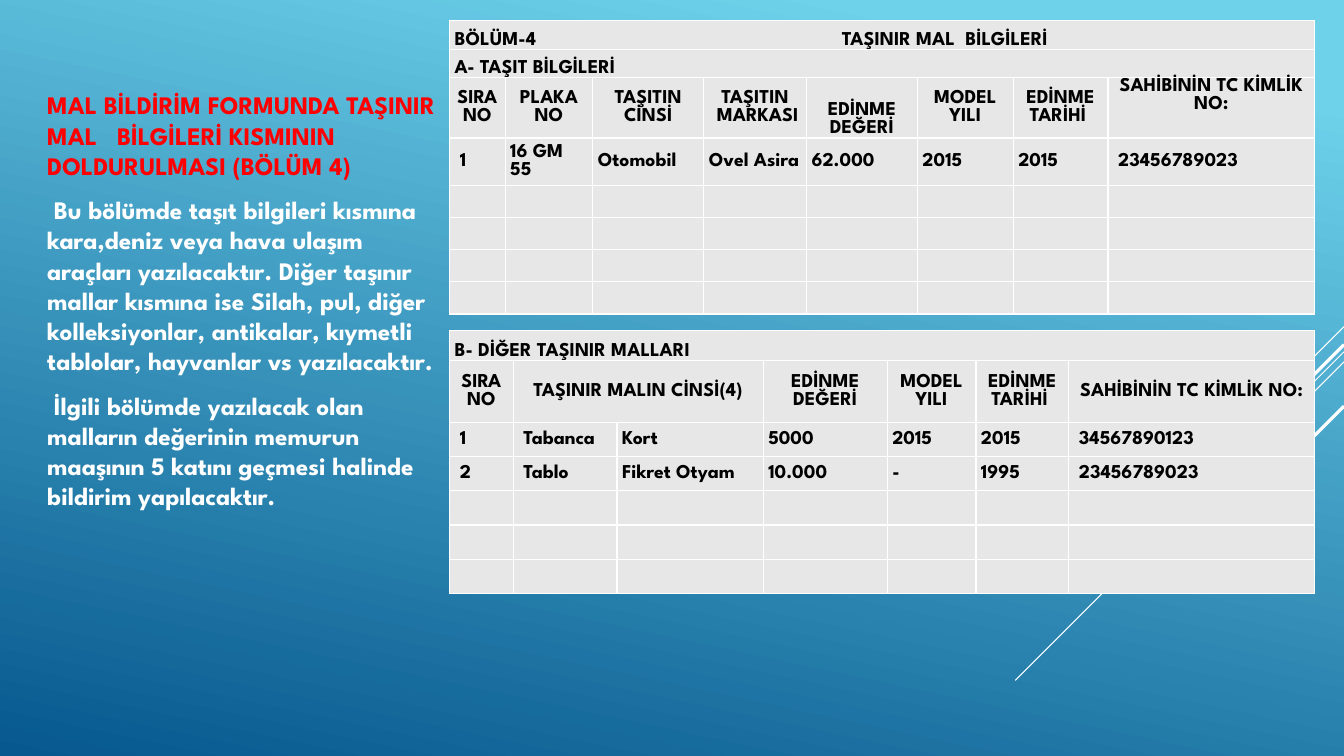
"""Build the slide on filling in the movable property section of the declaration form."""
from copy import deepcopy
from dataclasses import dataclass, field
from typing import Any

from lxml import etree
from pptx import Presentation
from pptx import util as u
from pptx.dml.color import RGBColor
from pptx.enum import shapes, text
from pptx.oxml import ns

SCALE = 9144


@dataclass(frozen=True)
class Theme:
    """Colours, font and type sizes of the slide."""
    font: str = "League Spartan"
    white: str = "FFFFFF"
    black: str = "000000"
    red: str = "FF0000"
    cell: str = "E7E7E7"
    sky: str = "6ED2EB"
    deep: str = "06588E"
    body_pt: int = 18
    table_pt: int = 14
    border_pt: int = 1


@dataclass(frozen=True)
class Stripe:
    """A diagonal line running from the right edge down to the left."""
    y: int
    run: int
    width: float


@dataclass(frozen=True)
class Paragraph:
    """One paragraph of the explanation."""
    words: str
    color: str


@dataclass(frozen=True)
class FormTable:
    """A section of the form, with its columns, rows and wording."""
    top: int
    cols: list[int]
    rows: list[int]
    titles: list[str]
    headers: list[str]
    data: list[list[str]]
    merges: list[tuple[int, int, int]]
    anchors: dict[tuple[int, int], Any] = field(default_factory=dict)


T = Theme()
MIDDLE, TOP, BOTTOM = (text.MSO_ANCHOR.MIDDLE, text.MSO_ANCHOR.TOP, text.MSO_ANCHOR.BOTTOM)
WIDTH, HEIGHT = 1333, 750
TABLE_LEFT = 446
CELL_MARGIN = 5
TITLE_TAB = 384

STRIPES = [
    Stripe(324, 100, 0.75),
    Stripe(349, 326, 0.75),
    Stripe(359, 208, 0.75),
    Stripe(342, 191, 2.25),
    Stripe(403, 139, 2.25),
]

PARAGRAPHS = [
    Paragraph("MAL BİLDİRİM FORMUNDA TAŞINIR MAL   BİLGİLERİ KISMININ DOLDURULMASI (BÖLÜM 4)", T.red),
    Paragraph(" Bu bölümde taşıt bilgileri kısmına  kara,deniz veya hava ulaşım araçları "
              "yazılacaktır. Diğer taşınır mallar kısmına ise Silah, pul, diğer kolleksiyonlar, "
              "antikalar, kıymetli tablolar, hayvanlar vs yazılacaktır.", T.white),
    Paragraph(" İlgili bölümde yazılacak olan malların değerinin memurun maaşının 5 katını "
              "geçmesi halinde bildirim yapılacaktır.", T.white),
]

VEHICLES = FormTable(
    top=20,
    cols=[55, 87, 110, 102, 110, 95, 94, 205],
    rows=[29, 28, 60, 36] + [32] * 4,
    titles=["BÖLÜM-4\tTAŞINIR MAL  BİLGİLERİ", "A- TAŞIT BİLGİLERİ"],
    headers=["SIRA\nNO", "PLAKA\nNO", "TAŞITIN\nCİNSİ", "TAŞITIN\n MARKASI", "EDİNME DEĞERİ",
             "MODEL YILI", "EDİNME\nTARİHİ ", "SAHİBİNİN TC KİMLİK NO:"],
    data=[[" 1", "16 GM 55", "Otomobil", "Ovel Asira", "62.000", "2015", "2015", " 23456789023"]],
    merges=[(0, 0, 7), (1, 0, 7)],
    anchors={(2, 4): BOTTOM, (2, 7): TOP},
)

OTHER_GOODS = FormTable(
    top=328,
    cols=[63, 103, 145, 123, 88, 92, 244],
    rows=[30, 61] + [34] * 5,
    titles=["B- DİĞER TAŞINIR MALLARI"],
    headers=["SIRA\nNO", "TAŞINIR MALIN CİNSİ(4)", "", "EDİNME\nDEĞERİ", "MODEL YILI",
             "EDİNME\nTARİHİ ", "SAHİBİNİN TC KİMLİK NO:"],
    data=[[" 1", " Tabanca", "Kort", "5000", "2015", "2015", " 34567890123"],
          [" 2", " Tablo", "Fikret Otyam", "10.000", "-", "1995", " 23456789023"]],
    merges=[(0, 0, 6), (1, 1, 2)],
    anchors={(1, c): MIDDLE for c in range(7)},
)


def px(n: int) -> u.Emu:
    """Turn px into EMU."""
    return u.Emu(n * SCALE)


def apply(obj: Any, fmt: dict[str, Any]) -> None:
    """Set each named attribute of an object."""
    for name, value in fmt.items():
        setattr(obj, name, value)


def write(p: Any, words: str, size: int, color: str) -> None:
    """Write bold text into a paragraph, with line breaks in the same format."""
    p.text = words
    for r in p.runs:
        apply(r.font, {"name": T.font, "size": u.Pt(size), "bold": True})
        r.font.color.rgb = RGBColor.from_string(color)
    for br in p._p.findall(ns.qn("a:br")):
        br.append(deepcopy(p.runs[0].font._element))


def paint_background(slide: Any) -> None:
    """Fill the background with the blue gradient."""
    fill = slide.background.fill
    fill.gradient()
    fill.gradient_angle = 258
    for stop, color, position in zip(fill.gradient_stops, (T.sky, T.deep), (0.1, 1.0)):
        stop.color.rgb = RGBColor.from_string(color)
        stop.position = position


def add_stripe(slide: Any, stripe: Stripe) -> None:
    """Draw one diagonal line."""
    line = slide.shapes.add_connector(
        shapes.MSO_CONNECTOR.STRAIGHT, px(WIDTH), px(stripe.y),
        px(WIDTH - stripe.run), px(stripe.y + stripe.run))
    line.line.width = u.Pt(stripe.width)
    line.line.color.rgb = RGBColor.from_string(T.white)
    etree.SubElement(line._element.spPr, ns.qn("a:effectLst"))


def add_explanation(slide: Any) -> None:
    """Add the text to the left of the tables."""
    tf = slide.shapes.add_textbox(px(37), px(84), px(409), px(591)).text_frame
    apply(tf, {"word_wrap": True, "vertical_anchor": TOP})
    for i, item in enumerate(PARAGRAPHS):
        p = tf.add_paragraph() if i else tf.paragraphs[0]
        apply(p, {"space_before": u.Pt(4), "space_after": u.Pt(6), "line_spacing": 1.0})
        write(p, item.words, T.body_pt, item.color)
        for r in p.runs:
            r.font._element.set("kern", "1200")


def style_cell(cell: Any, anchor: Any) -> None:
    """Give a cell its margins, anchor, fill and white borders."""
    apply(cell, {"margin_left": px(CELL_MARGIN), "margin_right": px(CELL_MARGIN),
                 "margin_top": 0, "margin_bottom": 0, "vertical_anchor": anchor})
    cell.fill.solid()
    cell.fill.fore_color.rgb = RGBColor.from_string(T.cell)
    tc_pr = cell._tc.get_or_add_tcPr()
    for i, side in enumerate(("lnL", "lnR", "lnT", "lnB")):
        ln = etree.Element(ns.qn(f"a:{side}"), w=str(u.Pt(T.border_pt)))
        fill = etree.SubElement(ln, ns.qn("a:solidFill"))
        etree.SubElement(fill, ns.qn("a:srgbClr"), val=T.white)
        tc_pr.insert(i, ln)


def add_form_table(slide: Any, form: FormTable) -> None:
    """Add one section of the form as a table."""
    table = slide.shapes.add_table(
        len(form.rows), len(form.cols), px(TABLE_LEFT), px(form.top),
        px(sum(form.cols)), px(sum(form.rows))).table
    apply(table, {"first_row": False, "horz_banding": False})
    for col, width in zip(table.columns, form.cols):
        col.width = px(width)
    for row, height in zip(table.rows, form.rows):
        row.height = px(height)
    for r, first, last in form.merges:
        table.cell(r, first).merge(table.cell(r, last))
    header = len(form.titles)
    content = [[title] for title in form.titles] + [form.headers] + form.data
    for r in range(len(form.rows)):
        for c in range(len(form.cols)):
            cell = table.cell(r, c)
            style_cell(cell, form.anchors.get((r, c), BOTTOM if r < header else MIDDLE))
            if r < len(content) and c < len(content[r]) and content[r][c]:
                p = cell.text_frame.paragraphs[0]
                write(p, content[r][c], T.table_pt, T.black)
                if r == header:
                    p.alignment = text.PP_ALIGN.CENTER
                if "\t" in content[r][c]:
                    tabs = etree.SubElement(p._p.get_or_add_pPr(), ns.qn("a:tabLst"))
                    etree.SubElement(tabs, ns.qn("a:tab"), pos=str(px(TITLE_TAB)), algn="l")


prs = Presentation()
apply(prs, {"slide_width": px(WIDTH), "slide_height": px(HEIGHT)})
page = prs.slides.add_slide(prs.slide_layouts[6])
paint_background(page)
for diagonal in STRIPES:
    add_stripe(page, diagonal)
add_explanation(page)
for section in (VEHICLES, OTHER_GOODS):
    add_form_table(page, section)
prs.save("out.pptx")
